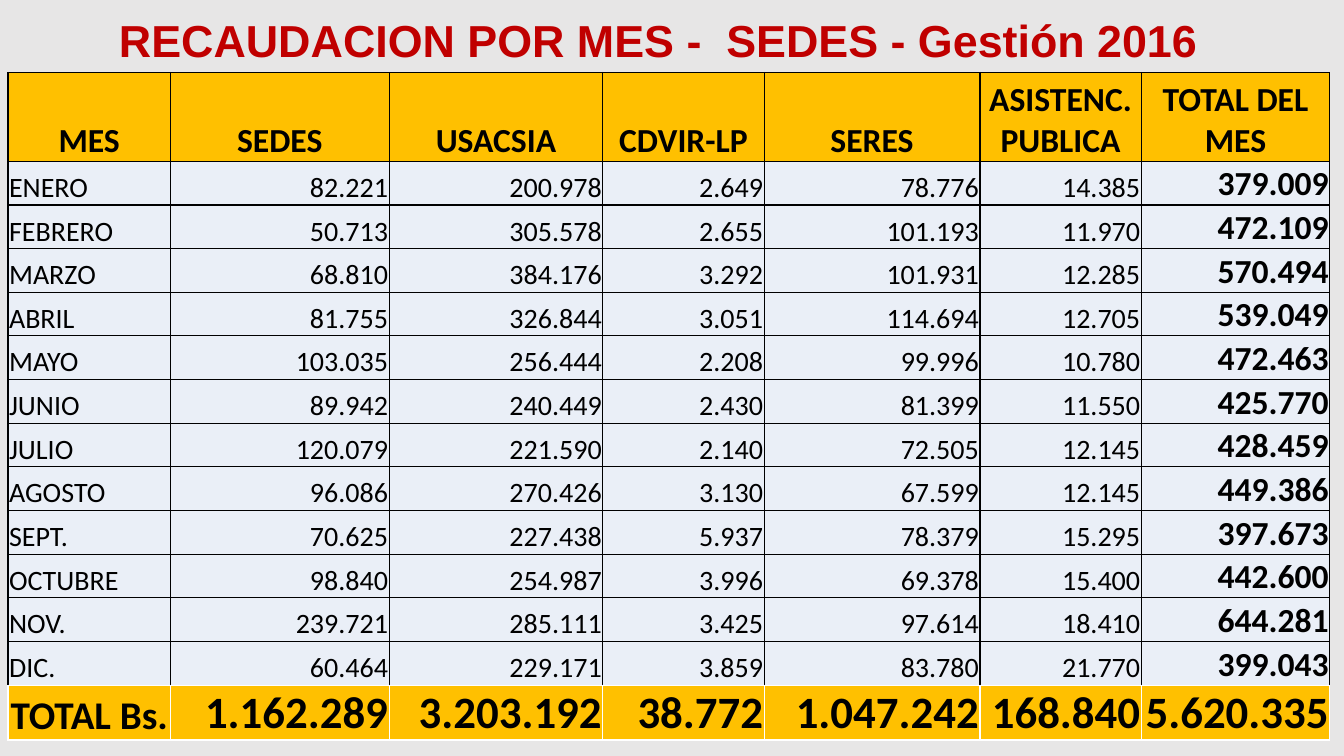
"""Builds the slide with the monthly revenue table for 2016."""
import pptx
import pptx.dml.color
import pptx.enum.text
import pptx.oxml
import pptx.oxml.ns
import pptx.util

Inches = pptx.util.Inches
ALIGN = pptx.enum.text.PP_ALIGN
ANCHOR = pptx.enum.text.MSO_ANCHOR

HEADERS = ["MES", "SEDES", "USACSIA", "CDVIR-LP", "SERES", "ASISTENC. PUBLICA", "TOTAL DEL MES"]
MONTHS = [
    ["ENERO", "82.221", "200.978", "2.649", "78.776", "14.385", "379.009"],
    ["FEBRERO", "50.713", "305.578", "2.655", "101.193", "11.970", "472.109"],
    ["MARZO", "68.810", "384.176", "3.292", "101.931", "12.285", "570.494"],
    ["ABRIL", "81.755", "326.844", "3.051", "114.694", "12.705", "539.049"],
    ["MAYO", "103.035", "256.444", "2.208", "99.996", "10.780", "472.463"],
    ["JUNIO", "89.942", "240.449", "2.430", "81.399", "11.550", "425.770"],
    ["JULIO", "120.079", "221.590", "2.140", "72.505", "12.145", "428.459"],
    ["AGOSTO", "96.086", "270.426", "3.130", "67.599", "12.145", "449.386"],
    ["SEPT.", "70.625", "227.438", "5.937", "78.379", "15.295", "397.673"],
    ["OCTUBRE", "98.840", "254.987", "3.996", "69.378", "15.400", "442.600"],
    ["NOV.", "239.721", "285.111", "3.425", "97.614", "18.410", "644.281"],
    ["DIC.", "60.464", "229.171", "3.859", "83.780", "21.770", "399.043"],
]
TOTALS = ["TOTAL Bs.", "1.162.289", "3.203.192", "38.772", "1.047.242", "168.840", "5.620.335"]
COLUMN_WIDTHS = [1.61, 2.17, 2.12, 1.6, 2.14, 1.6, 1.87]
HEADER_HEIGHT, MONTHS_HEIGHT, TOTAL_HEIGHT = 0.88, 5.2, 0.54


def color(value):
    return pptx.dml.color.RGBColor.from_string(value)


class RevenueSlide:
    GOLD, PALE, BLACK, WHITE = "FFC000", "EAEFF7", "000000", "FFFFFF"
    RED, GRAY = "C00000", "E7E6E6"

    def __init__(self, presentation):
        self.slide = presentation.slides.add_slide(presentation.slide_layouts[5])
        background = self.slide.background.fill
        background.solid()
        background.fore_color.rgb = color(self.GRAY)

    def add_text(self, text_frame, text, font_name, size, bold, ink, alignment):
        paragraph = text_frame.paragraphs[0]
        paragraph.alignment = alignment
        run = paragraph.add_run()
        run.text = text
        run.font.name = font_name
        run.font.size = pptx.util.Pt(size)
        run.font.bold = bold
        run.font.color.rgb = color(ink)

    def title(self, text, left, top, width, height):
        shape = self.slide.shapes.title
        shape.left, shape.top = Inches(left), Inches(top)
        shape.width, shape.height = Inches(width), Inches(height)
        shape.text_frame.word_wrap = True
        shape.text_frame.auto_size = pptx.enum.text.MSO_AUTO_SIZE.SHAPE_TO_FIT_TEXT
        shape.text_frame.vertical_anchor = ANCHOR.TOP
        self.add_text(shape.text_frame, text, "Arial", 32, True, self.RED, ALIGN.CENTER)
        shape.text_frame.paragraphs[0].line_spacing = 1.0

    def borders(self, cell, side_colors):
        properties = cell._tc.get_or_add_tcPr()
        for index, (side, ink) in enumerate(side_colors.items()):
            line = pptx.oxml.parse_xml(
                f'<a:ln{side} {pptx.oxml.ns.nsdecls("a")} w="12700"><a:solidFill>'
                f'<a:srgbClr val="{ink}"/></a:solidFill></a:ln{side}>')
            properties.insert(index, line)

    def cell(self, cell, text, size, bold, alignment, fill, side_colors):
        cell.margin_left = cell.margin_right = cell.margin_top = Inches(0.01)
        cell.margin_bottom = 0
        cell.vertical_anchor = ANCHOR.BOTTOM
        cell.fill.solid()
        cell.fill.fore_color.rgb = color(fill)
        self.add_text(cell.text_frame, text, "Calibri", size, bold, self.BLACK, alignment)
        self.borders(cell, side_colors)

    def table(self, left, top):
        rows = [HEADERS, *MONTHS, TOTALS]
        heights = [HEADER_HEIGHT, *[MONTHS_HEIGHT / len(MONTHS)] * len(MONTHS), TOTAL_HEIGHT]
        table = self.slide.shapes.add_table(
            len(rows), len(HEADERS), Inches(left), Inches(top),
            Inches(sum(COLUMN_WIDTHS)), Inches(sum(heights))).table
        for column, width in zip(table.columns, COLUMN_WIDTHS):
            column.width = Inches(width)
        last_row, last_column = len(rows) - 1, len(HEADERS) - 1
        for row_index, (texts, height) in enumerate(zip(rows, heights)):
            table.rows[row_index].height = Inches(height)
            is_total = row_index == last_row
            is_month = 0 < row_index < last_row
            side_colors = dict.fromkeys("LRTB", self.WHITE if is_total else self.BLACK)
            if row_index == last_row - 1:
                side_colors["B"] = self.WHITE
            for column_index, text in enumerate(texts):
                is_label = column_index == 0
                if is_month:
                    bold = column_index == last_column
                    size = 24 if bold else 20
                    alignment = ALIGN.LEFT if is_label else ALIGN.RIGHT
                elif is_total:
                    bold = True
                    size = 28 if is_label else 32
                    alignment = ALIGN.CENTER if is_label else ALIGN.RIGHT
                else:
                    bold, size, alignment = True, 24, ALIGN.CENTER
                self.cell(table.cell(row_index, column_index), text, size, bold, alignment,
                          self.PALE if is_month else self.GOLD, side_colors)


def main():
    presentation = pptx.Presentation()
    presentation.slide_width, presentation.slide_height = Inches(13.33), Inches(7.5)
    revenue = RevenueSlide(presentation)
    revenue.title("RECAUDACION POR MES -  SEDES - Gestión 2016 ", 0.23, 0.08, 12.73, 0.64)
    revenue.table(0.08, 0.72)
    presentation.save("out.pptx")


if __name__ == "__main__":
    main()
